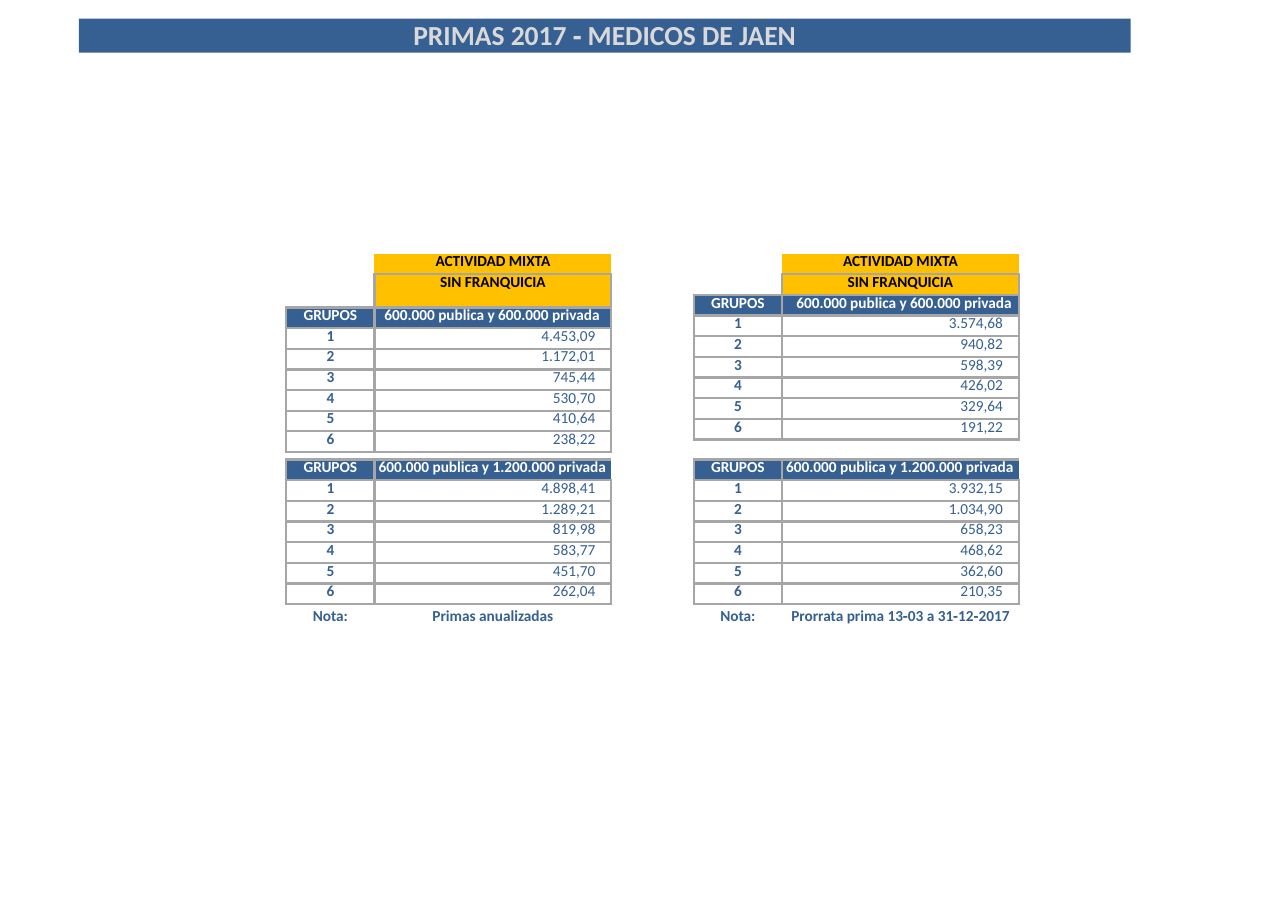
"""Build the 2017 premium tables slide for the doctors of Jaén."""
from dataclasses import dataclass

from lxml.etree import SubElement
from pptx import Presentation
from pptx.dml.color import RGBColor
from pptx.enum.text import MSO_ANCHOR, MSO_AUTO_SIZE, PP_ALIGN
from pptx.oxml.ns import qn
from pptx.util import Pt

TITLE = "PRIMAS 2017 ‐ MEDICOS DE JAEN"
ACTIVITY, EXCESS = "ACTIVIDAD MIXTA", "SIN FRANQUICIA"
GROUPS, NOTE = "GRUPOS", "Nota:"
BASIC_COVER = "600.000 publica y 600.000 privada"
WIDE_COVER = "600.000 publica y 1.200.000 privada"

PANELS = [
    {
        "left": 187.1,
        "excess_height": 21.7,
        "cover_format": (PP_ALIGN.LEFT, 6.5, 0),
        "basic": ["4.453,09", "1.172,01", "745,44", "530,70", "410,64", "238,22"],
        "wide": ["4.898,41", "1.289,21", "819,98", "583,77", "451,70", "262,04"],
        "note": "Primas anualizadas",
    },
    {
        "left": 453.4,
        "excess_height": 13.5,
        "cover_format": (PP_ALIGN.RIGHT, 0, 4.8),
        "basic": ["3.574,68", "940,82", "598,39", "426,02", "329,64", "191,22"],
        "wide": ["3.932,15", "1.034,90", "658,23", "468,62", "362,60", "210,35"],
        "note": "Prorrata prima 13‐03 a 31‐12‐2017",
    },
]

SLIDE_SIZE = (841.68, 595.44)
TITLE_BOX = (51.6, 12.2, 687.3, 22.2)
COLUMNS = (57.6, 154.8)
ROW_HEIGHT = 13.5
BASIC_TOP, WIDE_TOP, NOTE_TOP = 165.8, 300.4, 396
CENTERED = (PP_ALIGN.CENTER, 0, 0)
WIDE_COVER_FORMAT = (PP_ALIGN.LEFT, 2.8, 0)
VALUE_FORMAT = (PP_ALIGN.RIGHT, 0, 10.5)
NO_STYLE = "{2D5ABB26-0587-4C30-8999-92F81FD0307C}"


@dataclass(frozen=True)
class Theme:
    """Colours, font and type sizes of the slide."""
    font: str = "Calibri"
    blue: str = "366092"
    amber: str = "FFC000"
    border: str = "A6A6A6"
    title_text: str = "D9D9D9"
    black: str = "000000"
    white: str = "FFFFFF"
    title_size: float = 18
    text_size: float = 10
    title_spacing: float = 20.3
    cell_spacing: float = 11.3
    border_width: float = 1.68


THEME = Theme()


def write(text_frame, text, color, size=THEME.text_size, bold=True,
          align=PP_ALIGN.CENTER, spacing=None):
    """Write one formatted run in the first paragraph."""
    paragraph = text_frame.paragraphs[0]
    paragraph.alignment = align
    if spacing:
        paragraph.line_spacing = Pt(spacing)
    run = paragraph.add_run()
    run.text = text
    run.font.name = THEME.font
    run.font.size = Pt(size)
    run.font.bold = bold
    run.font.color.rgb = RGBColor.from_string(color)


def clear_margins(item, left=0, right=0):
    """Set the side margins and remove the top and bottom ones."""
    item.margin_left, item.margin_right = Pt(left), Pt(right)
    item.margin_top = item.margin_bottom = 0


def format_cell(cell, fill=None, sides="LRTB"):
    """Draw borders on the given sides and set the fill."""
    properties = cell._tc.get_or_add_tcPr()
    for side in "LRTB":
        line = SubElement(properties, qn(f"a:ln{side}"))
        if side in sides:
            line.set("w", str(Pt(THEME.border_width)))
            color = SubElement(SubElement(line, qn("a:solidFill")), qn("a:srgbClr"))
            color.set("val", THEME.border)
        else:
            SubElement(line, qn("a:noFill"))
    if fill:
        cell.fill.solid()
        cell.fill.fore_color.rgb = RGBColor.from_string(fill)
    else:
        cell.fill.background()


def fill_cell(cell, text, color, fill=None, sides="LRTB", bold=True, layout=CENTERED):
    """Write and format one table cell."""
    align, left, right = layout
    clear_margins(cell, left, right)
    format_cell(cell, fill, sides)
    write(cell.text_frame, text, color, bold=bold, align=align,
          spacing=THEME.cell_spacing)


def add_grid(slide, left, top, heights):
    """Add an unstyled two-column table."""
    frame = slide.shapes.add_table(len(heights), len(COLUMNS), Pt(left), Pt(top),
                                   Pt(sum(COLUMNS)), Pt(sum(heights)))
    table = frame.table
    table._tbl.tblPr.find(qn("a:tableStyleId")).text = NO_STYLE
    table.first_row = table.horz_banding = False
    for column, width in zip(table.columns, COLUMNS):
        column.width = Pt(width)
    for row, height in zip(table.rows, heights):
        row.height = Pt(height)
    return table


def fill_premiums(table, first_row, cover, cover_format, cover_sides, premiums):
    """Write the header row and the numbered premium rows."""
    fill_cell(table.cell(first_row, 0), GROUPS, THEME.white, THEME.blue)
    fill_cell(table.cell(first_row, 1), cover, THEME.white, THEME.blue,
              cover_sides, layout=cover_format)
    for group, premium in enumerate(premiums, 1):
        fill_cell(table.cell(first_row + group, 0), str(group), THEME.blue)
        fill_cell(table.cell(first_row + group, 1), premium, THEME.blue,
                  bold=False, layout=VALUE_FORMAT)


def add_basic_table(slide, panel):
    """Add the upper table with its two amber headings."""
    heights = [ROW_HEIGHT, panel["excess_height"]] + [ROW_HEIGHT] * 7
    table = add_grid(slide, panel["left"], BASIC_TOP, heights)
    for row in range(2):
        corner = table.cell(row, 0)
        clear_margins(corner)
        format_cell(corner, sides="B" if row else "")
        ending = SubElement(corner.text_frame.paragraphs[0]._p, qn("a:endParaRPr"))
        ending.set("sz", str(int(THEME.text_size * 100)))
    table.cell(0, 0).merge(table.cell(1, 0))
    fill_cell(table.cell(0, 1), ACTIVITY, THEME.black, THEME.amber, "B")
    fill_cell(table.cell(1, 1), EXCESS, THEME.black, THEME.amber)
    fill_premiums(table, 2, BASIC_COVER, panel["cover_format"], "LRTB", panel["basic"])


def add_wide_table(slide, panel):
    """Add the lower table."""
    table = add_grid(slide, panel["left"], WIDE_TOP, [ROW_HEIGHT] * 7)
    fill_premiums(table, 0, WIDE_COVER, WIDE_COVER_FORMAT, "LTB", panel["wide"])


def add_notes(slide, panel):
    """Add the note label and its text under the two columns."""
    left = panel["left"]
    for text, width in zip((NOTE, panel["note"]), COLUMNS):
        box = slide.shapes.add_textbox(Pt(left), Pt(NOTE_TOP), Pt(width), Pt(ROW_HEIGHT))
        clear_margins(box.text_frame)
        box.text_frame.word_wrap = True
        write(box.text_frame, text, THEME.blue)
        left += width


def add_title(slide):
    """Turn the title placeholder into the blue banner."""
    title = slide.shapes.title
    title.left, title.top, title.width, title.height = map(Pt, TITLE_BOX)
    title.fill.solid()
    title.fill.fore_color.rgb = RGBColor.from_string(THEME.blue)
    clear_margins(title.text_frame)
    title.text_frame.auto_size = MSO_AUTO_SIZE.NONE
    title.text_frame.vertical_anchor = MSO_ANCHOR.MIDDLE
    write(title.text_frame, TITLE, THEME.title_text, THEME.title_size,
          spacing=THEME.title_spacing)


def main():
    """Create and save the presentation."""
    presentation = Presentation()
    presentation.slide_width, presentation.slide_height = map(Pt, SLIDE_SIZE)
    slide = presentation.slides.add_slide(presentation.slide_layouts[5])
    add_title(slide)
    for panel in PANELS:
        add_basic_table(slide, panel)
        add_wide_table(slide, panel)
        add_notes(slide, panel)
    presentation.save("out.pptx")


if __name__ == "__main__":
    main()
